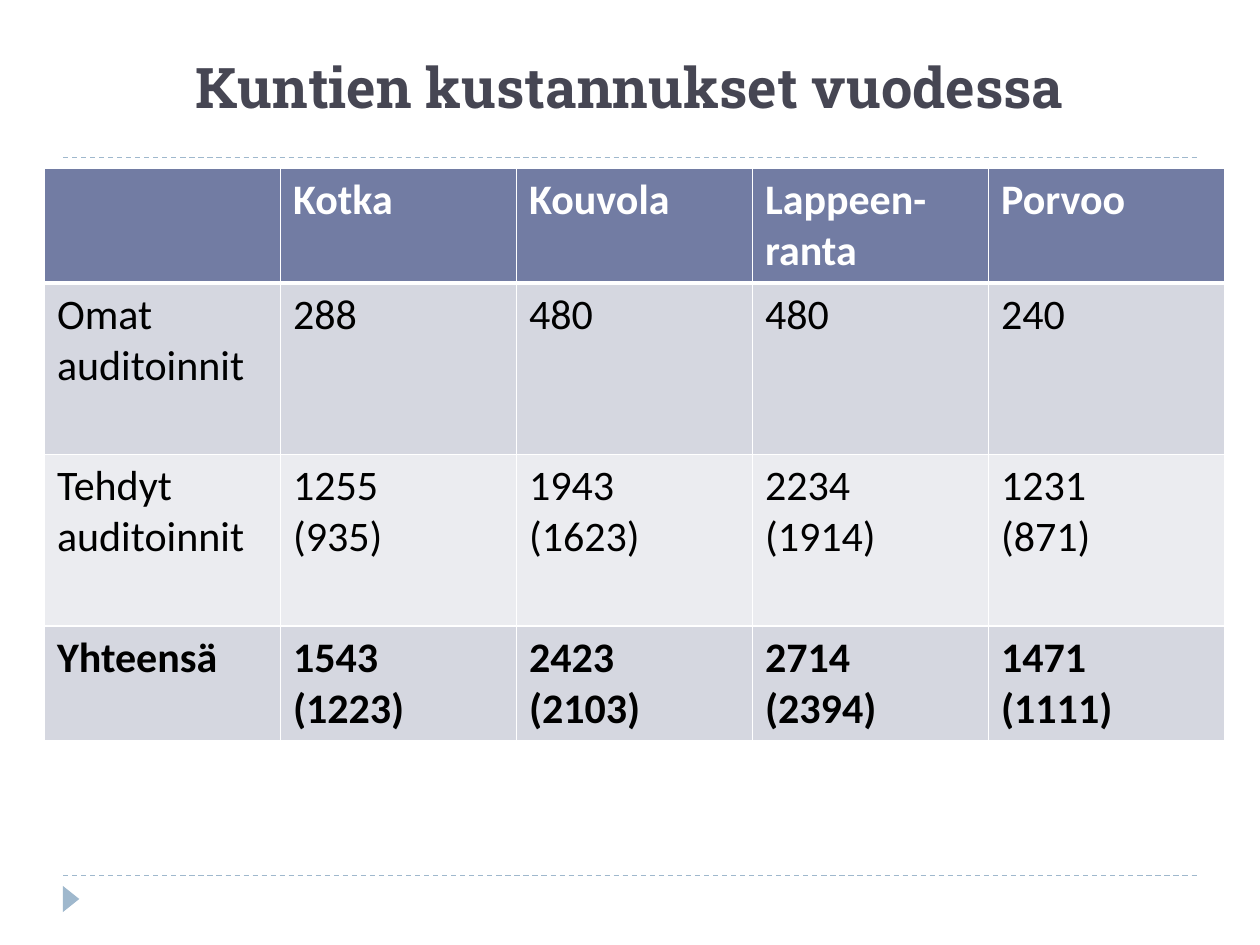
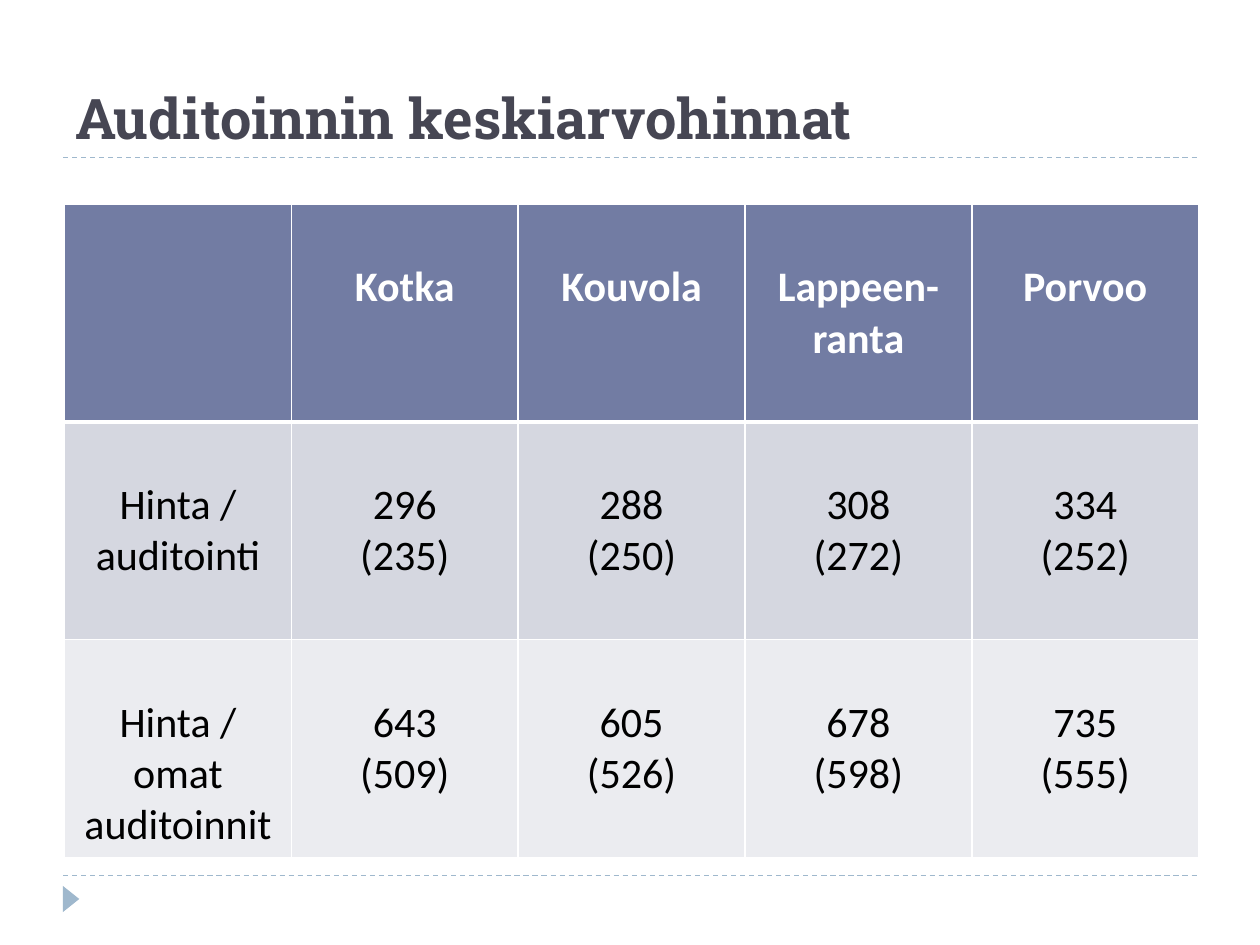
import lxml.etree
import pptx
import pptx.dml.color
import pptx.enum.dml
import pptx.enum.shapes
import pptx.enum.text
import pptx.oxml
import pptx.oxml.ns
import pptx.util

Pt = pptx.util.Pt
Align = pptx.enum.text.PP_ALIGN

COLORS = {
    "title": "464653",
    "accent": "9FB8CD",
    "header": "727CA3",
    "band_dark": "D5D7E0",
    "band_light": "EBECF0",
    "white": "FFFFFF",
    "text": "000000",
}
TITLE_FONT, TABLE_FONT = "Roboto Slab", "Calibri"
RULE_LEFT, RULE_RIGHT = 36, 684
RULE_TOPS = (90, 500.4)
CITIES = ["", "Kotka", "Kouvola", "Lappeen-ranta", "Porvoo"]
YEARLY_COSTS = [
    CITIES,
    ["Omat auditoinnit", "288", "480", "480", "240"],
    ["Tehdyt auditoinnit", "1255\n(935)", "1943\n(1623)", "2234\n(1914)", "1231\n(871)"],
    ["Yhteensä", "1543\n(1223)", "2423\n(2103)", "2714\n(2394)", "1471\n(1111)"],
]
AVERAGE_PRICES = [
    CITIES,
    ["Hinta / auditointi", "296\n(235)", "288\n(250)", "308\n(272)", "334\n(252)"],
    ["Hinta / omat auditoinnit", "643\n(509)", "605\n(526)", "678\n(598)", "735\n(555)"],
]


def color(name):
    return pptx.dml.color.RGBColor.from_string(COLORS[name])


def style_text(frame, font, size, color_name, bold, align):
    for para in frame.paragraphs:
        para.alignment = align
        for span in para.runs:
            span.font.name = font
            span.font.size = Pt(size)
            span.font.bold = bold
            span.font.color.rgb = color(color_name)


def add_decoration(page):
    """Draw the two dashed rules and the footer arrow shared by all slides."""
    for top in RULE_TOPS:
        rule = page.shapes.add_connector(
            pptx.enum.shapes.MSO_CONNECTOR.STRAIGHT,
            Pt(RULE_LEFT), Pt(top), Pt(RULE_RIGHT), Pt(top))
        rule.line.color.rgb = color("accent")
        rule.line.width = Pt(0.75)
        rule.line.dash_style = pptx.enum.dml.MSO_LINE.DASH
        properties = rule.element.find(pptx.oxml.ns.qn("p:spPr"))
        lxml.etree.SubElement(properties, pptx.oxml.ns.qn("a:effectLst"))
    arrow = page.shapes.add_shape(
        pptx.enum.shapes.MSO_SHAPE.ISOSCELES_TRIANGLE,
        Pt(33.1), Pt(509), Pt(15), Pt(9.4))
    arrow.rotation = 90
    arrow.shadow.inherit = False
    arrow.fill.solid()
    arrow.fill.fore_color.rgb = color("accent")
    arrow.line.fill.background()


def set_title(page, text, box, align):
    title = page.shapes.title
    title.left, title.top, title.width, title.height = map(Pt, box)
    frame = title.text_frame
    frame.text = text
    frame.word_wrap = True
    frame.auto_size = pptx.enum.text.MSO_AUTO_SIZE.NONE
    frame.vertical_anchor = pptx.enum.text.MSO_ANCHOR.BOTTOM
    style_text(frame, TITLE_FONT, 32, "title", True, align)


def set_borders(cell, top, bottom):
    """Give a cell white borders; top and bottom are widths in points."""
    properties = cell._tc.get_or_add_tcPr()
    widths = {"lnL": 1, "lnR": 1, "lnT": top, "lnB": bottom}
    for position, (side, width) in enumerate(widths.items()):
        border = pptx.oxml.parse_xml(
            f'<a:{side} {pptx.oxml.ns.nsdecls("a")} w="{Pt(width)}"><a:solidFill>'
            f'<a:srgbClr val="{COLORS["white"]}"/></a:solidFill></a:{side}>')
        properties.insert(position, border)


def add_cost_table(page, rows, box, heights, align, margin_top=3.6, total_row=None):
    left, top, width = box
    frame = page.shapes.add_table(
        len(rows), len(rows[0]), Pt(left), Pt(top), Pt(width), Pt(sum(heights)))
    table = frame.table
    table.horz_banding = False
    for column in table.columns:
        column.width = Pt(width / len(rows[0]))
    for row_index, values in enumerate(rows):
        table.rows[row_index].height = Pt(heights[row_index])
        is_header = row_index == 0
        band = "header" if is_header else "band_dark" if row_index % 2 else "band_light"
        for column_index, value in enumerate(values):
            cell = table.cell(row_index, column_index)
            cell.margin_top = Pt(margin_top)
            cell.text_frame.text = value
            style_text(cell.text_frame, TABLE_FONT, 24,
                       "white" if is_header else "text",
                       is_header or row_index == total_row, align)
            cell.fill.solid()
            cell.fill.fore_color.rgb = color(band)
            set_borders(cell, top=3 if row_index == 1 else 1, bottom=3 if is_header else 1)


def add_page(deck):
    page = deck.slides.add_slide(deck.slide_layouts.get_by_name("Title Only"))
    add_decoration(page)
    return page


def add_yearly_costs(deck):
    page = add_page(deck)
    set_title(page, "Kuntien kustannukset vuodessa", (36, 12.2, 648, 59.8), Align.CENTER)
    add_cost_table(page, YEARLY_COSTS, (25.4, 95.9, 674.5),
                   (65.8, 98, 98, 65.8), Align.LEFT, total_row=3)


def add_average_prices(deck):
    page = add_page(deck)
    set_title(page, "Auditoinnin keskiarvohinnat", (36, 12.2, 648, 77.8), Align.LEFT)
    add_cost_table(page, AVERAGE_PRICES, (36.9, 116.8, 648),
                   (124.4,) * 3, Align.CENTER, margin_top=32.9)


def main():
    deck = pptx.Presentation()
    deck.slide_width, deck.slide_height = Pt(720), Pt(540)
    add_yearly_costs(deck)
    add_average_prices(deck)
    deck.save("out.pptx")


if __name__ == "__main__":
    main()
